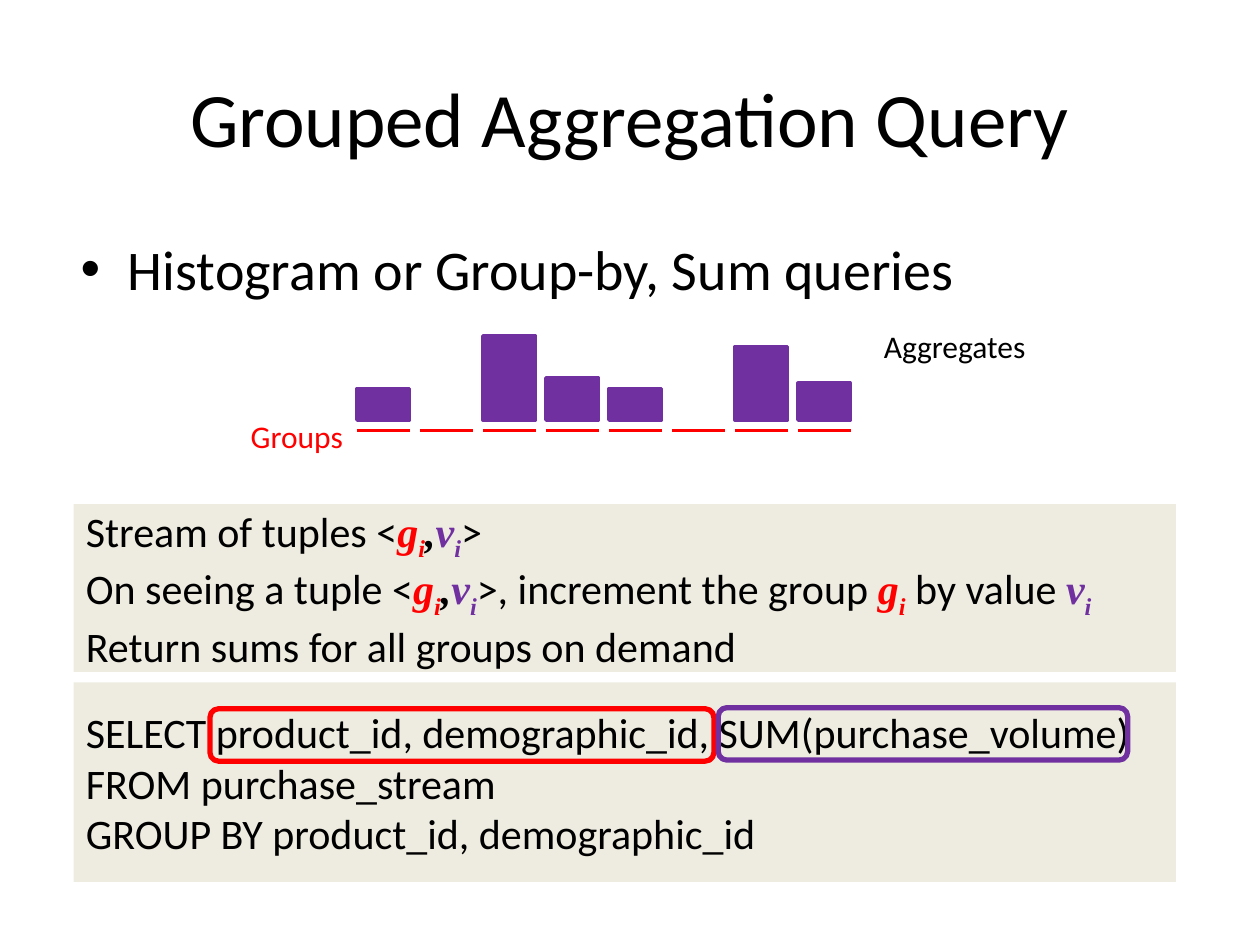
from lxml.etree import SubElement
from pptx import Presentation
from pptx.dml.color import RGBColor
from pptx.enum.shapes import MSO_CONNECTOR as Connector, MSO_SHAPE as Preset
from pptx.enum.text import MSO_ANCHOR as Anchor, PP_ALIGN as Align
from pptx.oxml.ns import qn
from pptx.util import Pt

PX = 7620
BLACK, RED, PURPLE, BEIGE = "000000", "FF0000", "7030A0", "EEECE1"
GROUP = [("g", RED, 0), ("i", RED, -25)]
VALUE = [("v", PURPLE, 0), ("i", PURPLE, -25)]
PAIR = GROUP + [(",", BLACK, 0)] + VALUE


def px(*lengths):
    return [length * PX for length in lengths]


def color(value):
    return RGBColor.from_string(value)


def style_font(font, size, value=BLACK):
    font.name = "Calibri"
    font.size = Pt(size)
    font.color.rgb = color(value)


def add_text(slide, box, text, size, value=BLACK, wrap=True):
    shape = slide.shapes.add_textbox(*px(*box))
    frame = shape.text_frame
    frame.word_wrap = wrap
    paragraph = frame.paragraphs[0]
    paragraph.text = text
    style_font(paragraph.font, size, value)
    return frame


def add_box(slide, preset, box, fill=None, line=None, width=2):
    shape = slide.shapes.add_shape(preset, *px(*box))
    shape.shadow.inherit = False
    if fill:
        shape.fill.solid()
        shape.fill.fore_color.rgb = color(fill)
    else:
        shape.fill.background()
    if line:
        shape.line.color.rgb = color(line)
        shape.line.width = Pt(width)
    else:
        shape.line.fill.background()
    return shape


def add_title(slide, box):
    frame = add_text(slide, box, "Grouped Aggregation Query", 44)
    frame.vertical_anchor = Anchor.MIDDLE
    frame.paragraphs[0].alignment = Align.CENTER


def add_bullet(slide, box):
    frame = add_text(slide, box, "Histogram or Group-by, Sum queries", 32)
    properties = frame.paragraphs[0]._p.get_or_add_pPr()
    properties.set("marL", str(45 * PX))
    properties.set("indent", str(-45 * PX))
    bullet_font = properties.makeelement(qn("a:buFont"), {"typeface": "Arial"})
    bullet = properties.makeelement(qn("a:buChar"), {"char": "•"})
    properties.insert(0, bullet_font)
    properties.insert(1, bullet)


def add_histogram(slide, left, top):
    heights = [30, 0, 80, 40, 30, 0, 70, 35]
    bar_width, step, base, axis = 50, 60, 80, 90
    for index, height in enumerate(heights):
        x = left + index * step
        ends = px(x, top + axis, x + bar_width, top + axis)
        line = slide.shapes.add_connector(Connector.STRAIGHT, *ends)
        line.line.color.rgb = color(RED)
        line.line.width = Pt(2.25)
        SubElement(line._element.spPr, qn("a:effectLst"))
        if height:
            bar = (x, top + base - height, bar_width, height)
            add_box(slide, Preset.RECTANGLE, bar, PURPLE, PURPLE)
    add_text(slide, (left - 113, top + 71, 113, 48), "Groups", 18, RED, False)
    add_text(slide, (left + 490, top - 14, 161, 48), "Aggregates", 18, wrap=False)


def add_panel(slide, box, lines):
    frame = add_box(slide, Preset.RECTANGLE, box, BEIGE).text_frame
    frame.vertical_anchor = Anchor.MIDDLE
    for index, parts in enumerate(lines):
        paragraph = frame.add_paragraph() if index else frame.paragraphs[0]
        paragraph.alignment = Align.LEFT
        style_font(paragraph.font, 24)
        for part in parts:
            run = paragraph.add_run()
            if isinstance(part, str):
                run.text = part
                continue
            run.text, value, baseline = part
            run.font.name = "Times New Roman"
            run.font.bold = run.font.italic = True
            run.font.color.rgb = color(value)
            if baseline:
                run.font._element.set("baseline", str(baseline * 1000))


def add_query(slide, left, top, width, height):
    add_panel(slide, (left, top, width, height), [
        ["SELECT product_id, demographic_id, SUM(purchase_volume)"],
        ["FROM purchase_stream"],
        ["GROUP BY product_id, demographic_id"],
    ])
    keys = (left + 130, top + 25, 480, 50)
    total = (left + 614, top + 24, 390, 50)
    add_box(slide, Preset.ROUNDED_RECTANGLE, keys, line=RED, width=3)
    add_box(slide, Preset.ROUNDED_RECTANGLE, total, line=PURPLE, width=3)


def add_stream(slide, box):
    add_panel(slide, box, [
        ["Stream of tuples <", *PAIR, ">"],
        ["On seeing a tuple <", *PAIR, ">, increment the group ",
         *GROUP, " by value ", *VALUE],
        ["Return sums for all groups on demand"],
    ])


def main():
    presentation = Presentation()
    presentation.slide_width, presentation.slide_height = px(1200, 900)
    slide = presentation.slides.add_slide(presentation.slide_layouts[6])
    add_title(slide, (60, 36, 1080, 150))
    add_bullet(slide, (65, 217, 1080, 594))
    add_histogram(slide, 340, 320)
    add_query(slide, 70, 650, 1050, 190)
    add_stream(slide, (70, 480, 1050, 160))
    presentation.save("out.pptx")


if __name__ == "__main__":
    main()
